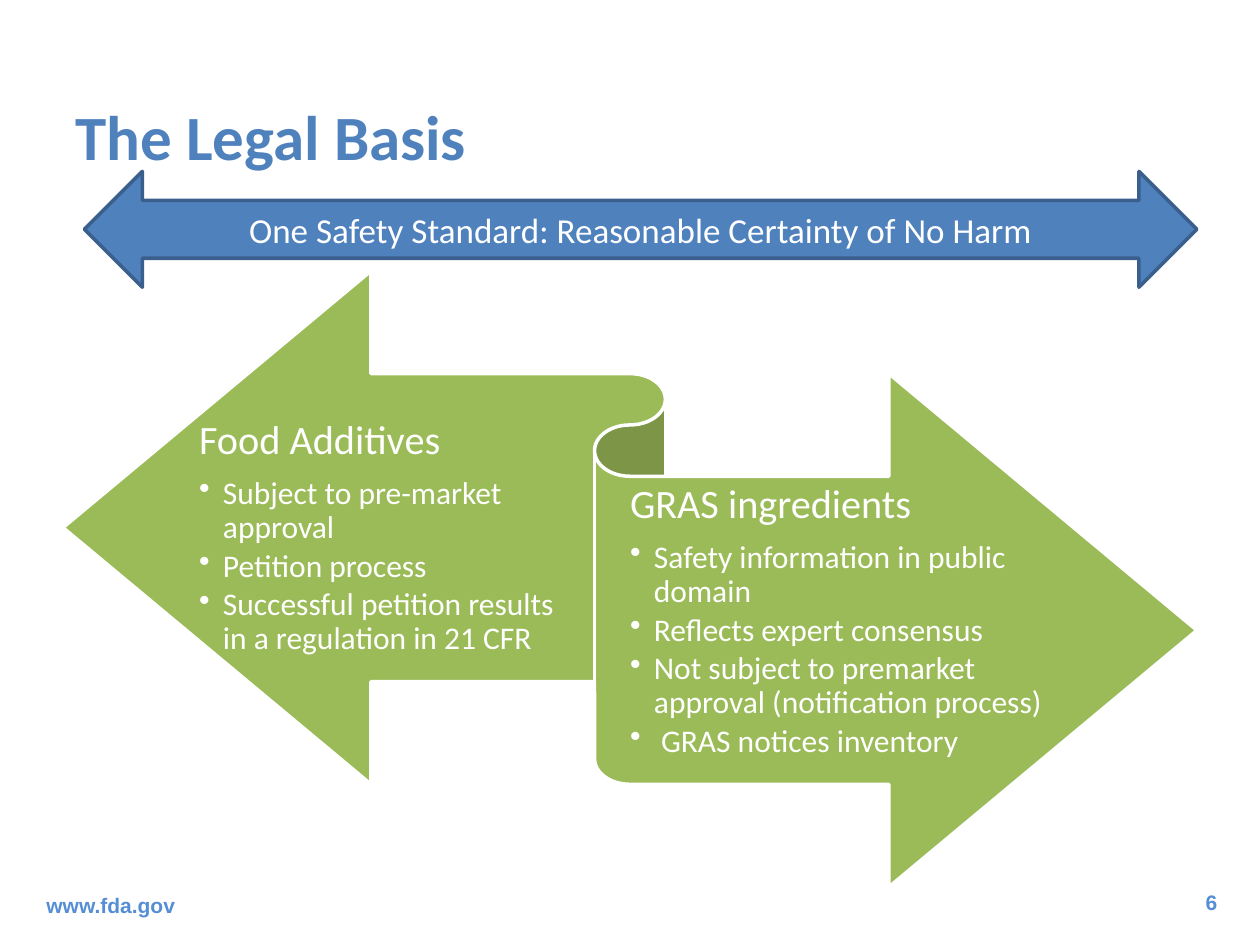
from lxml.etree import SubElement
from pptx import Presentation
from pptx.dml.color import RGBColor
from pptx.enum.shapes import MSO_SHAPE
from pptx.enum.text import MSO_ANCHOR, PP_ALIGN
from pptx.oxml.ns import qn
from pptx.util import Inches, Pt

WIDE, HIGH = 10, 7.5
WHITE, BLUE, SKY = "FFFFFF", "4F81BD", "558ED5"
LEFT = ("Food Additives", [
    "Subject to pre-market approval",
    "Petition process",
    "Successful petition results in a regulation in 21 CFR",
])
RIGHT = ("GRAS ingredients", [
    "Safety information in public domain",
    "Reflects expert consensus",
    "Not subject to premarket approval (notification process)",
    " GRAS notices inventory",
])


def color(code):
    return RGBColor.from_string(code)


def inch(box):
    return [Inches(side) for side in box]


def part(box, x, y, w, h):
    left, top, wide, high = box
    return left + x * wide, top + y * high, w * wide, h * high


def style(para, size, code, face="Calibri", bold=False):
    for run in para.runs:
        font = run.font
        font.name, font.size, font.bold = face, Pt(size), bold
        font.color.rgb = color(code)


def label(slide, box, text, size, code, face="Calibri", bold=True,
          align=PP_ALIGN.LEFT, wrap=True):
    frame = slide.shapes.add_textbox(*inch(box)).text_frame
    frame.word_wrap = wrap
    frame.vertical_anchor = MSO_ANCHOR.MIDDLE
    para = frame.paragraphs[0]
    para.text = text
    para.alignment = align
    style(para, size, code, face, bold)
    return frame


def solid(slide, kind, box, fill, edge):
    shape = slide.shapes.add_shape(kind, *inch(box))
    shape.shadow.inherit = False
    shape.fill.solid()
    shape.fill.fore_color.rgb = color(fill)
    shape.line.color.rgb = color(edge)
    shape.line.width = Pt(2)
    return shape


def bullet(para):
    props = para._p.get_or_add_pPr()
    props.set("marL", str(Inches(0.19)))
    props.set("indent", str(Inches(-0.19)))
    SubElement(props, qn("a:buChar")).set("char", "•")


def panel(slide, box, head, items):
    frame = label(slide, box, head, 23, WHITE, bold=False)
    frame.margin_left = frame.margin_right = 0
    frame.margin_top, frame.margin_bottom = Inches(0.09), Inches(0.1)
    first = frame.paragraphs[0]
    first.line_spacing, first.space_after = 0.9, Pt(8)
    for item in items:
        para = frame.add_paragraph()
        para.text = item
        para.level = 1
        para.line_spacing, para.space_after = 0.9, Pt(2.7)
        bullet(para)
        style(para, 18, WHITE)


def ribbon(slide, box):
    solid(slide, MSO_SHAPE.LEFT_RIGHT_RIBBON, box, "9BBB59", WHITE)
    panel(slide, part(box, 0.12, 0.2, 0.33, 0.47), *LEFT)
    panel(slide, part(box, 0.5, 0.21, 0.39, 0.72), *RIGHT)


def banner(slide, box):
    shape = solid(slide, MSO_SHAPE.LEFT_RIGHT_ARROW, box, BLUE, "3A5F8C")
    frame = shape.text_frame
    frame.word_wrap = True
    frame.vertical_anchor = MSO_ANCHOR.MIDDLE
    para = frame.paragraphs[0]
    para.text = "One Safety Standard: Reasonable Certainty of No Harm"
    para.alignment = PP_ALIGN.CENTER
    style(para, 20, WHITE)


def footer(slide, box):
    label(slide, part(box, 0, 0, 0.33, 1), "www.fda.gov", 12, SKY, "Arial")
    label(slide, part(box, 0.96, 0, 0.04, 0.9), "6", 12, SKY, "Arial",
          align=PP_ALIGN.RIGHT, wrap=False)


def main():
    deck = Presentation()
    deck.slide_width, deck.slide_height = Inches(WIDE), Inches(HIGH)
    slide = deck.slides.add_slide(deck.slide_layouts[6])
    label(slide, (0.5, 0.57, 9.31, 1.01), "The Legal Basis", 36, BLUE)
    ribbon(slide, (0.5, 2.15, 9, 4.89))
    banner(slide, (0.67, 1.36, 8.83, 0.92))
    footer(slide, (0.27, 6.98, 9.49, 0.4))
    deck.save("out.pptx")


if __name__ == "__main__":
    main()
